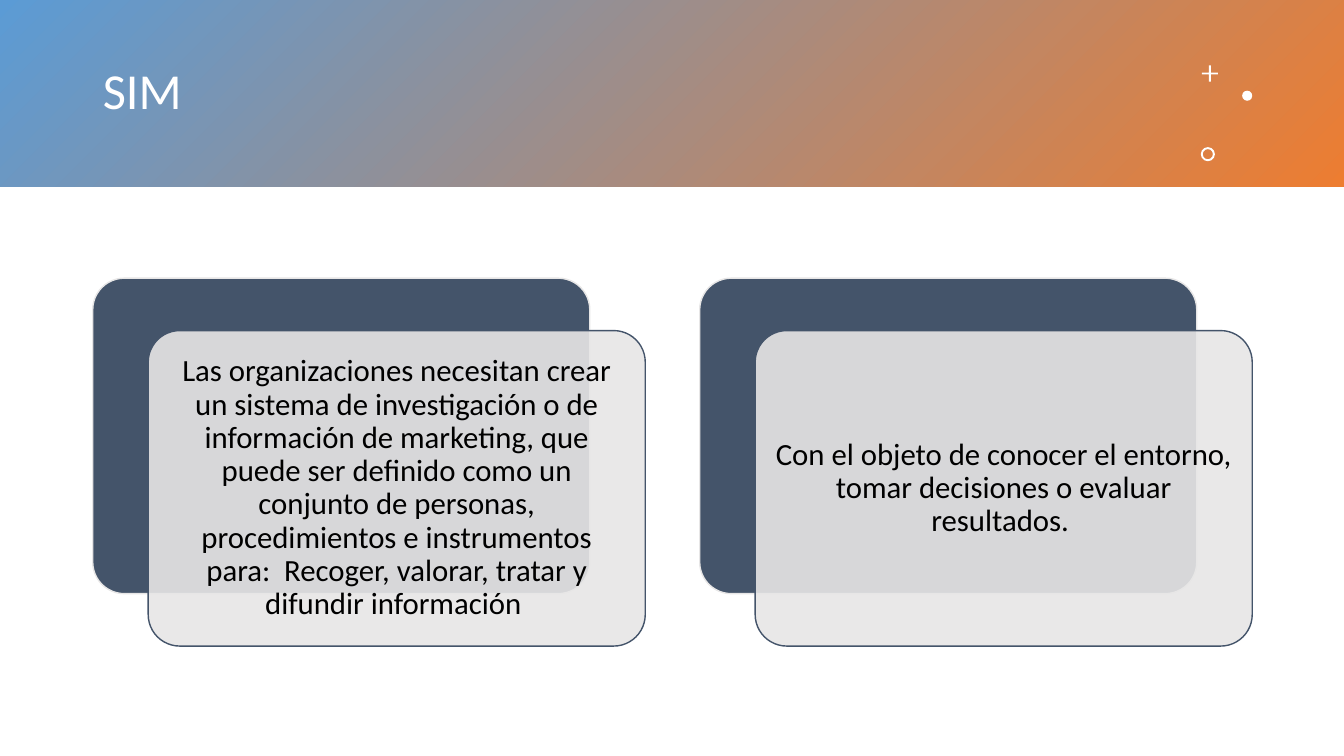
from dataclasses import dataclass

from lxml import etree
from pptx import Presentation
from pptx.dml.color import RGBColor
from pptx.enum import shapes, text
from pptx.oxml import ns
from pptx.util import Inches, Pt

WHITE = RGBColor(0xFF, 0xFF, 0xFF)
BLACK = RGBColor(0, 0, 0)
BLUE = RGBColor(0x5B, 0x9B, 0xD5)
ORANGE = RGBColor(0xED, 0x7D, 0x31)
NAVY = RGBColor(0x44, 0x54, 0x6A)
GREY = RGBColor(0xE7, 0xE6, 0xE6)
FONT = "Calibri"
KIND = shapes.MSO_SHAPE


@dataclass
class Mark:
    kind: KIND
    left: float
    top: float
    size: float
    adjust: float | None = None


@dataclass
class Card:
    left: float
    words: str


MARKS = [
    Mark(KIND.CROSS, 11.92, 0.65, 0.16, 0.44),
    Mark(KIND.OVAL, 12.32, 0.9, 0.1),
    Mark(KIND.DONUT, 11.91, 1.46, 0.14, 0.14),
]
CARDS = [
    Card(0.92, "Las organizaciones necesitan crear un sistema de investigación o de "
               "información de marketing, que puede ser definido como un conjunto de "
               "personas, procedimientos e instrumentos para:  Recoger, valorar, "
               "tratar y difundir información "),
    Card(6.94, "Con el objeto de conocer el entorno, tomar decisiones o evaluar "
               "resultados. "),
]
TOP, WIDTH, HEIGHT = 2.76, 4.93, 3.13
SHIFT_X, SHIFT_Y = 0.55, 0.52


def add_mark(slide, mark: Mark) -> None:
    shape = slide.shapes.add_shape(mark.kind, Inches(mark.left), Inches(mark.top),
                                   Inches(mark.size), Inches(mark.size))
    shape.shadow.inherit = False
    if mark.adjust is not None:
        shape.adjustments[0] = mark.adjust
    shape.fill.solid()
    shape.fill.fore_color.rgb = WHITE
    shape.line.fill.background()


def add_panel(slide, left: float, top: float, fill: RGBColor, line: RGBColor):
    panel = slide.shapes.add_shape(KIND.ROUNDED_RECTANGLE, Inches(left), Inches(top),
                                   Inches(WIDTH), Inches(HEIGHT))
    panel.shadow.inherit = False
    panel.adjustments[0] = 0.1
    panel.fill.solid()
    panel.fill.fore_color.rgb = fill
    panel.line.color.rgb = line
    panel.line.width = Pt(1)
    return panel


def add_card(slide, card: Card) -> None:
    add_panel(slide, card.left, TOP, NAVY, GREY)
    front = add_panel(slide, card.left + SHIFT_X, TOP + SHIFT_Y, GREY, NAVY)
    # 90% opacity lets the back panel show through
    color = front.element.spPr.find(ns.qn("a:solidFill")).find(ns.qn("a:srgbClr"))
    etree.SubElement(color, ns.qn("a:alpha"), val="90000")

    frame = front.text_frame
    frame.word_wrap = True
    frame.vertical_anchor = text.MSO_ANCHOR.MIDDLE
    frame.margin_left = frame.margin_right = Inches(0.09)
    frame.margin_top = frame.margin_bottom = Inches(0.09)
    frame.text = card.words
    para = frame.paragraphs[0]
    para.alignment = text.PP_ALIGN.CENTER
    para.line_spacing = 0.9
    para.font.name, para.font.size = FONT, Pt(22)
    para.font.color.rgb = BLACK


def add_banner(slide, width: int):
    banner = slide.shapes.add_shape(KIND.RECTANGLE, 0, 0, width, Inches(1.85))
    banner.shadow.inherit = False
    banner.line.fill.background()
    banner.fill.gradient()
    banner.fill.gradient_angle = 315
    for stop, color, place in zip(banner.fill.gradient_stops, (BLUE, ORANGE), (0, 1)):
        stop.color.rgb = color
        stop.position = place
    return banner


def set_title(slide, words: str) -> None:
    title = slide.shapes.title
    title.left, title.top = Inches(0.92), Inches(0.33)
    title.width, title.height = Inches(10.75), Inches(1.19)
    frame = title.text_frame
    frame.text = words
    frame.auto_size = text.MSO_AUTO_SIZE.NONE
    frame.vertical_anchor = text.MSO_ANCHOR.MIDDLE
    para = frame.paragraphs[0]
    para.alignment = text.PP_ALIGN.LEFT
    para.line_spacing = 0.9
    para.font.name, para.font.size = FONT, Pt(36)
    para.font.color.rgb = WHITE


def main() -> None:
    deck = Presentation()
    deck.slide_width, deck.slide_height = Inches(13.33), Inches(7.5)
    slide = deck.slides.add_slide(deck.slide_layouts[5])

    # Header: the title sits in front of the banner
    banner = add_banner(slide, deck.slide_width)
    set_title(slide, "SIM")
    banner.element.addnext(slide.shapes.title.element)
    for mark in MARKS:
        add_mark(slide, mark)

    # Body cards
    for card in CARDS:
        add_card(slide, card)
    deck.save("out.pptx")


if __name__ == "__main__":
    main()
